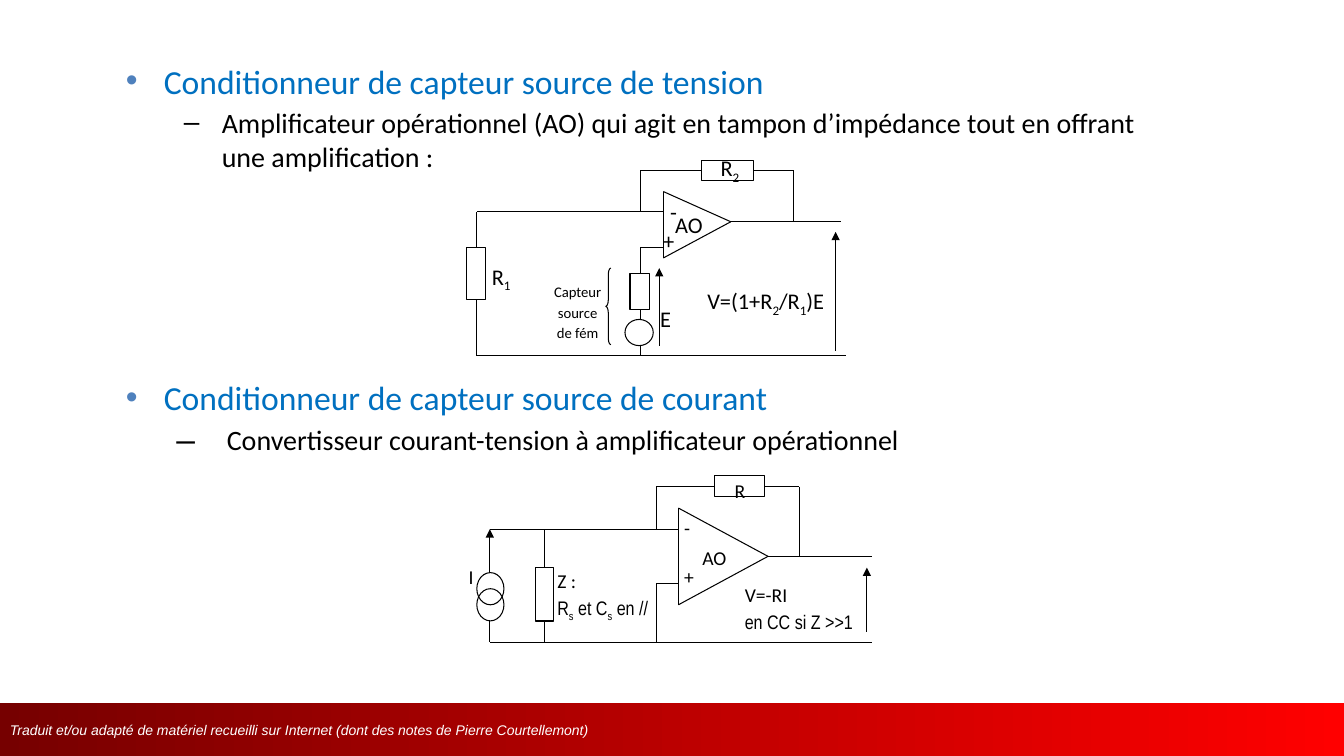
from dataclasses import dataclass
from itertools import pairwise

from lxml.etree import SubElement as Sub
from pptx import Presentation
from pptx.dml.color import RGBColor as RGB
from pptx.enum.shapes import MSO_CONNECTOR as Conn, MSO_SHAPE as Geo
from pptx.enum.text import MSO_ANCHOR as Anchor, PP_ALIGN as Align
from pptx.oxml.ns import qn
from pptx.util import Pt


@dataclass(frozen=True)
class Theme:
    ink: RGB = RGB(0, 0, 0)
    head: RGB = RGB(0x00, 0x70, 0xC0)
    dot: RGB = RGB(0x4F, 0x81, 0xBD)
    pale: RGB = RGB(255, 255, 255)
    dark: RGB = RGB(0x76, 0, 0)
    red: RGB = RGB(255, 0, 0)
    font: str = "Calibri"
    slim: str = "Arial Narrow"
    sans: str = "Arial"
    big: float = 24
    body: float = 20
    mark: float = 16
    note: float = 14
    tiny: float = 10.5
    foot: float = 10
    line: float = 0.75


def write(para, text, size, color, font, italic=None, align=None,
          before=0, after=0, lead=None):
    """Fill a paragraph; parts between underscores become subscripts."""
    para.alignment = align
    para.space_before, para.space_after = Pt(before), Pt(after)
    if lead:
        para.line_spacing = lead
    for i, part in enumerate(text.split("_")):
        if not part:
            continue
        run = para.add_run()
        run.text = part
        run.font.size, run.font.name = Pt(size), font
        run.font.color.rgb, run.font.italic = color, italic
        if i % 2:
            run.font._element.set("baseline", "-25000")


def bullet(para, sign, left, hang, color, font, scale=100):
    prop = para._p.get_or_add_pPr()
    prop.set("marL", str(Pt(left)))
    prop.set("indent", str(-Pt(hang)))
    Sub(Sub(prop, qn("a:buClr")), qn("a:srgbClr"), val=str(color))
    Sub(prop, qn("a:buSzPct"), val=str(scale * 1000))
    Sub(prop, qn("a:buFont"), typeface=font)
    Sub(prop, qn("a:buChar"), char=sign)


class Board:
    def __init__(self, slide, theme):
        self.slide, self.look = slide, theme

    def wire(self, *dots, arrow=False):
        """Join the points with straight lines."""
        for (x, y), (u, v) in pairwise(dots):
            line = self.slide.shapes.add_connector(
                Conn.STRAIGHT, Pt(x), Pt(y), Pt(u), Pt(v))
            line.line.color.rgb = self.look.ink
            line.line.width = Pt(self.look.line)
            Sub(line._element.spPr, qn("a:effectLst"))
            if arrow:
                Sub(line.line._get_or_add_ln(), qn("a:tailEnd"), type="triangle")

    def shape(self, kind, x, y, w, h):
        item = self.slide.shapes.add_shape(kind, Pt(x), Pt(y), Pt(w), Pt(h))
        item.shadow.inherit = False
        item.fill.background()
        item.line.color.rgb = self.look.ink
        item.line.width = Pt(self.look.line)
        return item

    def label(self, x, y, w, h, *rows, size=None, tail=None, align=None,
              before=None, after=0):
        """Place free text; tail is the font of the rows after the first."""
        look = self.look
        size = size or look.mark
        box = self.slide.shapes.add_textbox(Pt(x), Pt(y), Pt(w), Pt(h))
        frame = box.text_frame
        frame.word_wrap = False
        for i, row in enumerate(rows):
            para = frame.add_paragraph() if i else frame.paragraphs[0]
            gap = size * 0.2 if before is None else before
            write(para, row, size, look.ink,
                  tail if i and tail else look.font, align=align,
                  before=gap if i else 0, after=after)

    def amp(self, x, top, low, tip, mid):
        self.wire((x, top), (x, low), (tip, mid), (x, top))

    def footer(self, text):
        look = self.look
        bar = self.shape(Geo.RECTANGLE, 0, 502.5, 960, 37.5)
        bar.line.fill.background()
        bar.fill.gradient()
        bar.fill.gradient_angle = 0
        for stop, color in zip(bar.fill.gradient_stops, (look.dark, look.red)):
            stop.color.rgb = color
        frame = bar.text_frame
        frame.vertical_anchor = Anchor.MIDDLE
        write(frame.paragraphs[0], text, look.foot, look.pale, look.sans,
              italic=True, align=Align.LEFT)

    def outline(self):
        look = self.look
        title, body = self.slide.placeholders
        title._element.getparent().remove(title._element)
        body.left, body.top = Pt(82.8), Pt(50.4)
        body.width, body.height = Pt(759.6), Pt(356.4)
        frame = body.text_frame
        head = dict(size=look.big, color=look.head, font=look.font)
        sub = dict(size=look.body, color=look.ink, font=look.font)
        top = dict(sign="•", left=27, hang=27, color=look.dot)
        dash = dict(sign="–", color=look.ink)
        rows = (
            ("Conditionneur de capteur source de tension",
             dict(head, before=4.8, lead=0.6), top),
            ("Amplificateur opérationnel (AO) qui agit en tampon d’impédance "
             "tout en offrant une amplification :",
             dict(sub, before=4), dict(dash, left=68.4, hang=27)),
            ("Conditionneur de capteur source de courant",
             dict(head, before=146), top),
            ("Convertisseur courant-tension à amplificateur opérationnel",
             dict(sub, before=4), dict(dash, left=72, hang=36, scale=120)),
        )
        for i, (text, form, mark) in enumerate(rows):
            para = frame.add_paragraph() if i else frame.paragraphs[0]
            para.level = i % 2
            write(para, text, **form)
            bullet(para, font=look.sans, **mark)

    def volts(self):
        """Circuit with the voltage-source sensor."""
        left, node, base, minus, plus = 340.6, 457.2, 254.2, 151.2, 177.1
        amp, tip, out, loop, back = 473.8, 522, 158.4, 121.7, 566.6
        self.amp(amp, 136.8, 184.3, tip, out)
        self.wire((left, plus), (left, minus), (amp, minus))
        self.wire((left, 213.8), (left, base), (604.1, base))
        self.wire((501.1, loop), (node, loop), (node, minus))
        self.wire((538.6, loop), (back, loop), (back, out))
        self.wire((tip, out), (600.5, out))
        self.wire((amp, plus), (node, plus), (node, 195.1))
        self.wire((node, 221), (node, 228.2))
        self.wire((node, 246.9), (node, base))
        self.wire((470.9, 247), (470.9, 191.5), arrow=True)
        self.wire((596.9, 250.6), (596.9, 165.6), arrow=True)
        self.shape(Geo.RECTANGLE, 333.4, plus, 13.7, 36.7)
        self.shape(Geo.RECTANGLE, 501.1, 114.5, 37.4, 14.4)
        self.shape(Geo.RECTANGLE, 450, 195.1, 13.7, 25.9)
        self.shape(Geo.OVAL, 446.4, 228.2, 20.2, 18.7)
        brace = self.shape(Geo.LEFT_BRACE, 432.7, 191.5, 3.6, 54.7)
        brace.adjustments[0] = 1.24
        self.label(464.4, 214.6, 22.3, 26.6, "E")
        self.label(507.6, 106.6, 28.8, 26.6, "R_2_")
        self.label(344.2, 184.3, 28.8, 26.6, "R_1_")
        self.label(471.6, 138.2, 20.9, 26.6, "-")
        self.label(466.6, 158.4, 23, 26.6, "+")
        self.label(475.2, 147.6, 34.6, 26.6, "AO")
        self.label(498.2, 201.6, 100.8, 26.6, "V=(1+R_2_/R_1_)E")
        self.label(388.1, 198.7, 49, 50.4, "Capteur", "source", "de fém",
                   size=self.look.tiny, align=Align.CENTER)

    def amps(self):
        """Circuit with the current-source sensor."""
        left, mid, node, base, minus, plus = 349.9, 388.8, 468.7, 458.6, 378, 416.9
        amp, tip, out, loop, back = 484.6, 548.6, 397.4, 347.8, 571
        end, low, top, size = 622.8, 443.5, 405.4, self.look.note
        self.amp(amp, 362.9, 432, tip, out)
        self.wire((left, 409), (left, minus), arrow=True)
        self.wire((left, minus), (amp, minus))
        self.wire((left, low), (left, base), (end, base))
        self.wire((mid, minus), (mid, top))
        self.wire((mid, low), (mid, base))
        self.wire((510.5, loop), (node, loop), (node, minus))
        self.wire((545.8, loop), (back, loop), (back, out))
        self.wire((tip, out), (end, out))
        self.wire((amp, plus), (node, plus), (node, base))
        self.wire((619.2, 451.4), (619.2, top), arrow=True)
        for y in (409, 420.5):
            self.shape(Geo.OVAL, 340.6, y, 19.4, 23)
        self.shape(Geo.RECTANGLE, 382.3, top, 13, 38.2)
        self.shape(Geo.RECTANGLE, 510.5, 339.8, 35.3, 15.1)
        self.label(327.6, 400.3, 18, 24.5, "I", size=size)
        self.label(391, 402.5, 81.4, 44.6, "Z :", "R_s_ et C_s_ en //",
                   size=size, tail=self.look.slim)
        self.label(481.7, 365, 21.6, 59.8, "-", "+",
                   size=size, before=0, after=18)
        self.label(517.7, 338.4, 22.3, 24.5, "R", size=size)
        self.label(494.6, 386.6, 31.7, 24.5, "AO", size=size)
        self.label(524.9, 412.6, 92.2, 44.6, "V=-RI", "en CC si Z >>1",
                   size=size, tail=self.look.slim)


def main():
    deck = Presentation()
    deck.slide_width, deck.slide_height = Pt(960), Pt(540)
    board = Board(deck.slides.add_slide(deck.slide_layouts[1]), Theme())
    board.footer("Traduit et/ou adapté de matériel recueilli sur Internet "
                 "(dont des notes de Pierre Courtellemont)")
    board.outline()
    board.volts()
    board.amps()
    deck.save("out.pptx")


if __name__ == "__main__":
    main()
